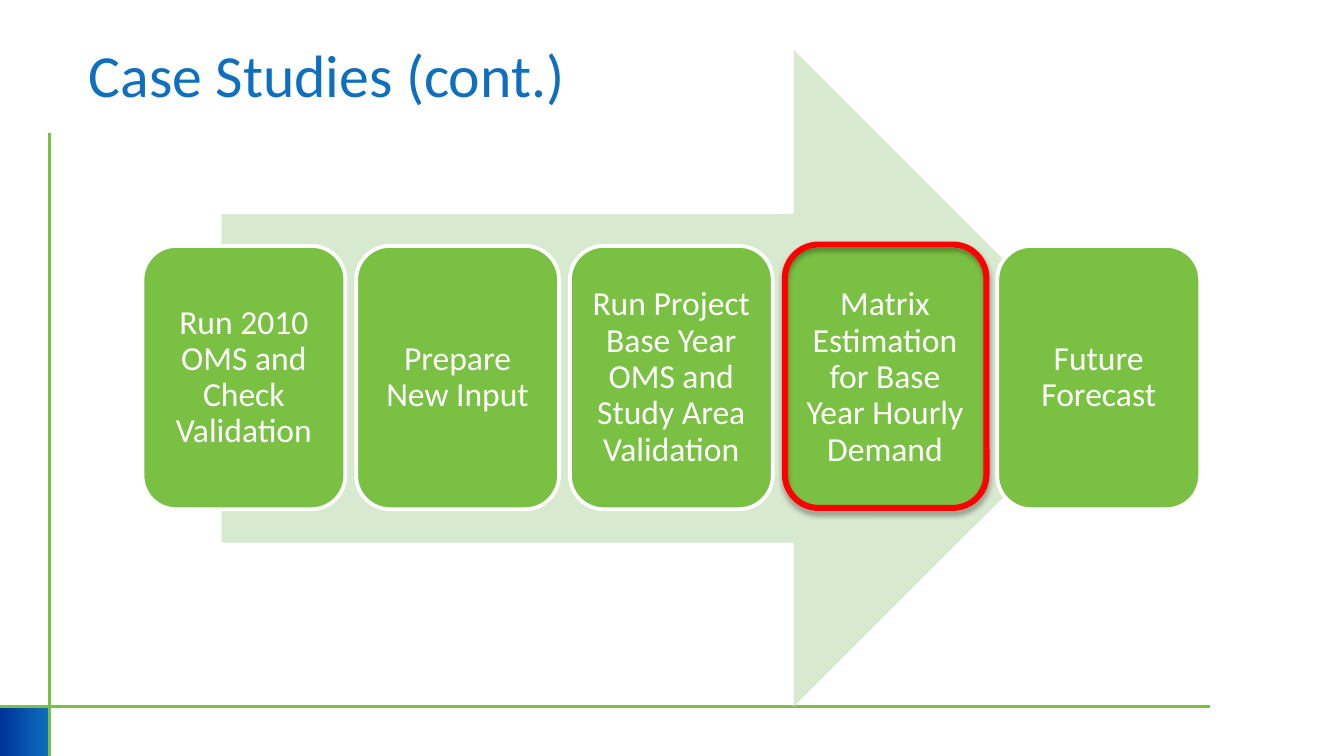
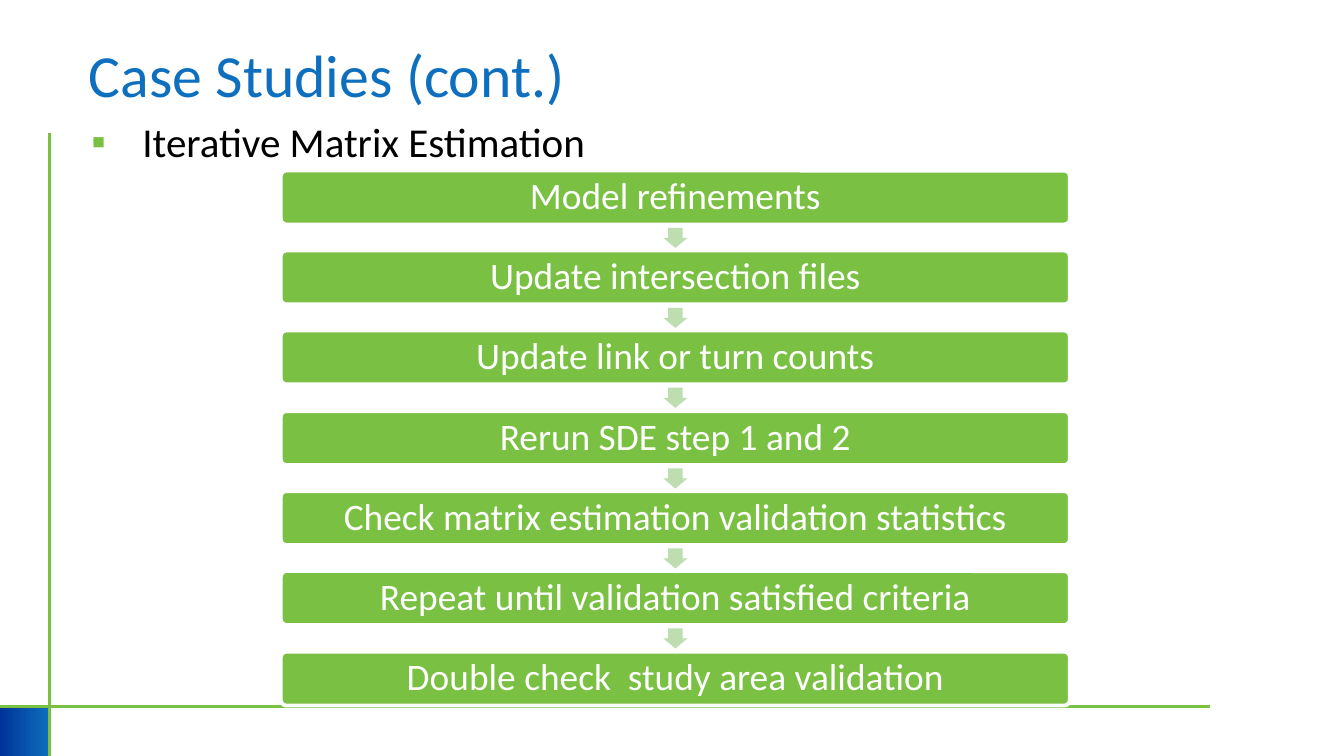
from lxml import etree
from pptx import Presentation
from pptx import util as u
from pptx.dml.color import RGBColor
from pptx.enum import shapes, text
from pptx.oxml import ns

EMU_PER_PX = 4572  # 200 px to the inch
PAGE_W, PAGE_H = 2000, 1125
MARGIN_X, BASELINE_Y = 74, 1052

GREEN = RGBColor(0x7A, 0xC1, 0x43)
PALE_GREEN = RGBColor(0xD7, 0xE9, 0xCF)
SOFT_GREEN = RGBColor(0xBE, 0xDD, 0xB0)
NAVY = RGBColor(0x00, 0x33, 0x99)
BLUE = RGBColor(0x0D, 0x6F, 0xBD)
RED = RGBColor(0xFF, 0x00, 0x00)
WHITE = RGBColor(0xFF, 0xFF, 0xFF)
BLACK = RGBColor(0x00, 0x00, 0x00)

TITLE_ONLY, TITLE_AND_BODY = 5, 1
SHAPE = shapes.MSO_SHAPE

CASE_STEPS = [
    "Run 2010 OMS and Check Validation",
    "Prepare New Input",
    "Run Project Base Year OMS and Study Area Validation",
    "Matrix Estimation for Base Year Hourly Demand",
    "Future Forecast",
]
ESTIMATION_STEPS = [
    "Model refinements",
    "Update intersection files",
    "Update link or turn counts",
    "Rerun SDE step 1 and 2",
    "Check matrix estimation validation statistics",
    "Repeat until validation satisfied criteria",
    "Double check  study area validation",
]


def px(length):
    return u.Emu(length * EMU_PER_PX)


def assign(target, values):
    for name, value in values.items():
        setattr(target, name, value)


def add_xml(parent, tag, **attributes):
    return etree.SubElement(parent, ns.qn(tag), attributes)


class Builder:
    """Holds the deck style and the page being drawn."""

    font_name = "Calibri"

    def __init__(self):
        self.deck = Presentation()
        assign(self.deck, {"slide_width": px(PAGE_W), "slide_height": px(PAGE_H)})
        self.page = None

    def new_page(self, layout, title):
        self.page = self.deck.slides.add_slide(self.deck.slide_layouts[layout])
        self.frame()
        box = self.page.shapes.title
        self.place(box, 112, 58, 1788, 104)
        self.put_text(box, title, 32, BLUE, text.PP_ALIGN.LEFT)

    def frame(self):
        """Draw the corner block and the two rules that meet at it."""
        corner = self.shape(SHAPE.RECTANGLE, 0, BASELINE_Y, MARGIN_X, PAGE_H - BASELINE_Y)
        corner.fill.gradient()
        corner.fill.gradient_angle = 0
        for stop, color in zip(corner.fill.gradient_stops, (NAVY, BLUE)):
            stop.color.rgb = color
        self.rule(0, BASELINE_Y, 1800, BASELINE_Y)
        self.rule(MARGIN_X, PAGE_H, MARGIN_X, 198)

    def rule(self, x1, y1, x2, y2):
        line = self.page.shapes.add_connector(
            shapes.MSO_CONNECTOR.STRAIGHT, px(x1), px(y1), px(x2), px(y2))
        line.line.color.rgb = GREEN
        line.line.width = u.Pt(1.5)
        add_xml(line._element.spPr, "a:effectLst")

    def place(self, box, x, y, w, h):
        assign(box, {"left": px(x), "top": px(y), "width": px(w), "height": px(h)})

    def shape(self, kind, x, y, w, h, fill=None, line=None, weight=2):
        box = self.page.shapes.add_shape(kind, px(x), px(y), px(w), px(h))
        box.shadow.inherit = False
        if fill is None:
            box.fill.background()
        else:
            box.fill.solid()
            box.fill.fore_color.rgb = fill
        if line is None:
            box.line.fill.background()
        else:
            box.line.color.rgb = line
            box.line.width = u.Pt(weight)
        return box

    def put_text(self, box, words, size, color, align, anchor=text.MSO_ANCHOR.MIDDLE):
        assign(box.text_frame, {"word_wrap": True, "vertical_anchor": anchor,
                                "auto_size": text.MSO_AUTO_SIZE.NONE})
        para = box.text_frame.paragraphs[0]
        para.alignment = align
        span = para.add_run()
        span.text = words
        assign(span.font, {"name": self.font_name, "size": u.Pt(size), "bold": False})
        span.font.color.rgb = color
        return para

    def step(self, words, x, y, w, h, size, inset):
        """Add a rounded green box with centred white words."""
        box = self.shape(SHAPE.ROUNDED_RECTANGLE, x, y, w, h, GREEN, WHITE)
        sides = ("left", "top", "right", "bottom")
        assign(box.text_frame, {f"margin_{side}": px(inset) for side in sides})
        para = self.put_text(box, words, size, WHITE, text.PP_ALIGN.CENTER)
        para.line_spacing = 0.9
        return box

    def highlight(self, x, y, w, h):
        ring = self.shape(SHAPE.ROUNDED_RECTANGLE, x, y, w, h, line=RED, weight=3.25)
        effects = ring._element.spPr.find(ns.qn("a:effectLst"))
        shadow = add_xml(effects, "a:outerShdw", blurRad=str(u.Pt(3.1)),
                         dist=str(u.Pt(1.8)), dir="5400000", rotWithShape="0")
        color = add_xml(shadow, "a:srgbClr", val=str(BLACK))
        add_xml(color, "a:alpha", val="35000")

    def bullet(self, words):
        box = self.page.placeholders[1]
        self.place(box, 116, 164, 1770, 118)
        para = self.put_text(box, words, 22, BLACK, text.PP_ALIGN.LEFT, text.MSO_ANCHOR.TOP)
        props = para._p.get_or_add_pPr()
        props.set("marL", str(px(76)))
        props.set("indent", str(px(-76)))
        add_xml(add_xml(props, "a:buClr"), "a:srgbClr", val=str(GREEN))
        add_xml(props, "a:buFont", typeface="Arial")
        add_xml(props, "a:buChar", char="▪")


def case_process(builder):
    builder.new_page(TITLE_ONLY, "Case Studies (cont.)")
    builder.shape(SHAPE.RIGHT_ARROW, 330, 74, 1340, 978, PALE_GREEN)
    for index, words in enumerate(CASE_STEPS):
        builder.step(words, 212 + 318 * index, 366, 302, 392, size=18, inset=14)
    builder.highlight(1168, 364, 300, 392)


def matrix_estimation(builder):
    builder.new_page(TITLE_AND_BODY, "Case Studies (cont.)")
    builder.bullet("Iterative Matrix Estimation")
    last = len(ESTIMATION_STEPS) - 1
    for index, words in enumerate(ESTIMATION_STEPS):
        top = 254 + 716 * index // last
        box = builder.step(words, 418, top, 1174, 80, size=20, inset=16)
        box.adjustments[0] = 0.1
        if index < last:
            arrow = builder.shape(SHAPE.RIGHT_ARROW, 990, top + 82, 30, 36, SOFT_GREEN)
            arrow.rotation = 90
            arrow.adjustments[0] = 0.6


def main():
    builder = Builder()
    case_process(builder)
    matrix_estimation(builder)
    builder.deck.save("out.pptx")


if __name__ == "__main__":
    main()
